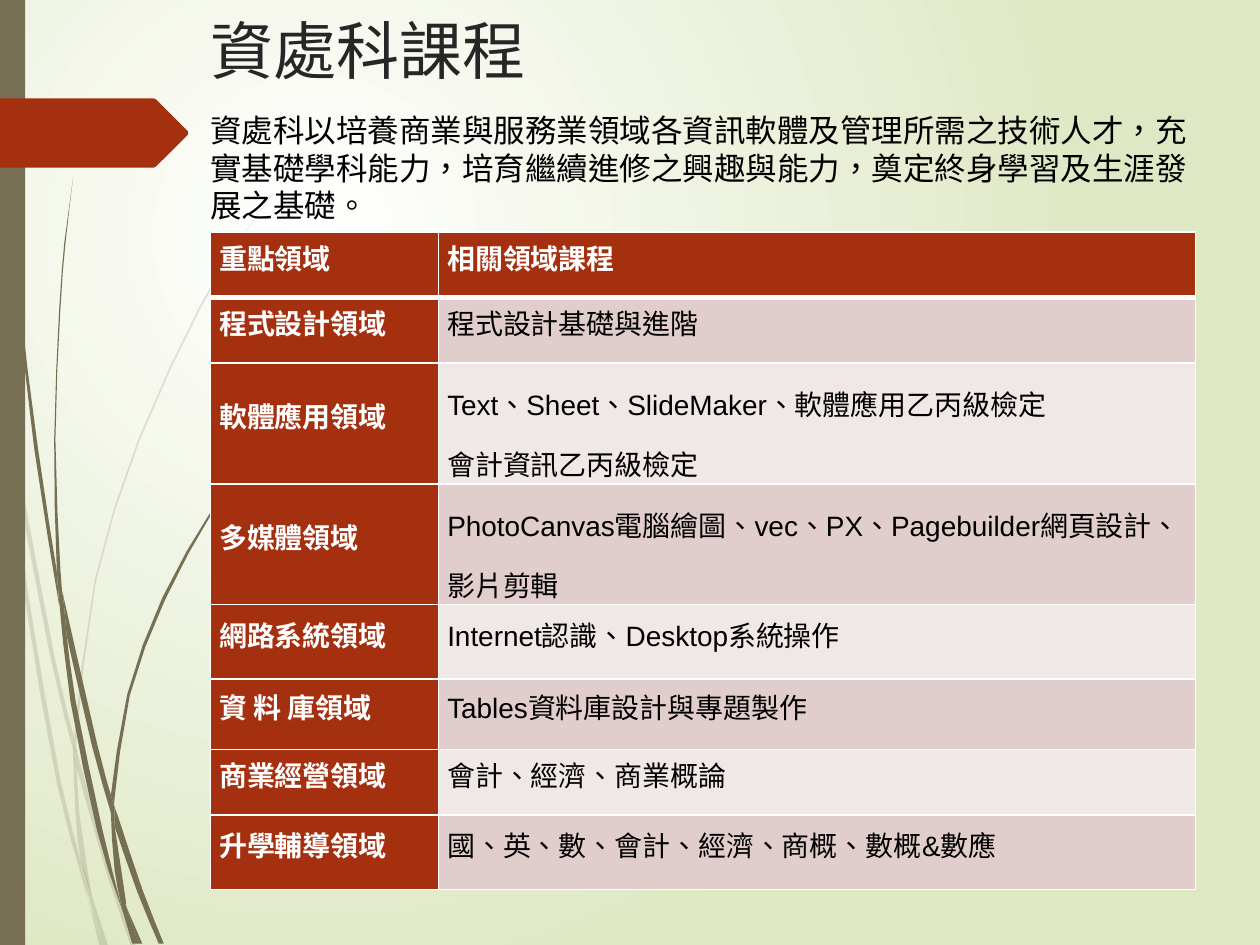
from lxml import etree
from pptx import Presentation
from pptx import util as u
from pptx.dml.color import RGBColor
from pptx.enum import lang, shapes, text
from pptx.oxml.ns import qn

COLORS = {"olive": "766F54", "red": "A53010", "white": "FFFFFF", "green": "DFE8C4",
          "title": "262626", "black": "000000", "pink": "E1CDCC", "pale": "F0E8E7"}

TITLE = "資處科課程"
INTRO = ("資處科以培養商業與服務業領域各資訊軟體及管理所需之技術人才，充實基礎學科能力，"
         "培育繼續進修之興趣與能力，奠定終身學習及生涯發展之基礎。")

# Row height, field, course paragraphs, line spacing of the courses
FIXED = u.Pt(14.4)
ROWS = [
    (0.52, "重點領域", ["相關領域課程"], FIXED),
    (0.52, "程式設計領域", ["程式設計基礎與進階"], FIXED),
    (0.96, "軟體應用領域", ["Text、Sheet、SlideMaker、軟體應用乙丙級檢定", "會計資訊乙丙級檢定"], 1.5),
    (0.96, "多媒體領域", ["PhotoCanvas電腦繪圖、vec、PX、Pagebuilder網頁設計、影片剪輯"], 1.5),
    (0.59, "網路系統領域", ["Internet認識、Desktop系統操作"], FIXED),
    (0.56, "資 料 庫領域", ["Tables資料庫設計與專題製作"], FIXED),
    (0.52, "商業經營領域", ["會計、經濟、商業概論"], FIXED),
    (0.59, "升學輔導領域", ["國、英、數、會計、經濟、商概、數概&數應"], FIXED),
]
COLUMNS = [1.81, 6.01]

# Grass blades: one edge, then the other edge on the way back
FAINT_BLADES = [
    ([(0.08, 3.5), (0.06, 3.22), (0, 2.82)], [(0, 2.99), (0.07, 3.44)]),
    ([(0.59, 5.86), (0.43, 5.2), (0.1, 3.45)], [(0.12, 3.76), (0.4, 5.22), (0.59, 5.99)]),
    ([(0.61, 5.96), (0.64, 6.07), (0.88, 6.92), (1.08, 7.51)],
     [(1.04, 7.51), (0.85, 6.94), (0.61, 6.1)]),
    ([(0.83, 7.51), (0.86, 7.51)], [(0.73, 7.11)]),
    ([(0.08, 3.5), (0.12, 3.76), (0.22, 4.69), (0.48, 6.19), (0.64, 6.83), (0.7, 7.14)],
     [(0.64, 6.93), (0.45, 6.21), (0.19, 4.7), (0.08, 3.5)]),
    ([(0.58, 5.99), (0.6, 6.46), (0.64, 6.83), (0.73, 7.11)],
     [(0.72, 7.06), (0.63, 6.46), (0.61, 6.1), (0.58, 5.99)]),
    ([(0.61, 5.96), (0.61, 5.84), (0.76, 4.62), (1.11, 3.49), (1.59, 2.45), (1.87, 1.98),
      (2.01, 1.75), (2.17, 1.54)],
     [(2.17, 1.53), (2.01, 1.75), (1.86, 1.97), (1.58, 2.44), (1.1, 3.48), (0.75, 4.61),
      (0.59, 5.84)]),
    ([(0.7, 7.14), (0.79, 7.51)], [(0.82, 7.51)]),
    ([(0.61, 6.1), (0.61, 5.96), (0.59, 5.86)], [(0.58, 5.99)]),
    ([(0.65, 6.83), (0.69, 7.07), (0.82, 7.51)], [(0.83, 7.51), (0.73, 7.11), (0.65, 6.83)]),
]
SOLID_BLADES = [
    ([(0.02, 0), (0.03, 0.48), (0.05, 1.1), (0.14, 2.33), (0.27, 3.55), (0.47, 4.81)],
     [(0.45, 4.53), (0.3, 3.55), (0.15, 2.32), (0.06, 1.09), (0.04, 0.48), (0.03, 0)]),
    ([(0.88, 6.31), (0.77, 5.9), (0.5, 4.72)], [(0.53, 5.05), (0.73, 5.92), (0.88, 6.45)]),
    ([(0.91, 6.41), (0.94, 6.49), (1.13, 7.06), (1.3, 7.49)],
     [(1.26, 7.49), (1.09, 7.08), (0.91, 6.56)]),
    ([(0.47, 4.77), (0.53, 5.05), (0.6, 5.56), (0.81, 6.57), (0.97, 7.22)],
     [(0.92, 7.08), (0.77, 6.59), (0.56, 5.57), (0.47, 4.77)]),
    ([(0.5, 4.72), (0.48, 4.53), (0.44, 3.49), (0.48, 2.45), (0.52, 1.93), (0.58, 1.41)],
     [(0.51, 1.93), (0.47, 2.45), (0.43, 3.49), (0.45, 4.49), (0.49, 4.72)]),
    ([(1, 7.19), (1.1, 7.49)], [(1.13, 7.49)]),
    ([(0.45, 4.49), (0.47, 4.77), (0.53, 5.05)], [(0.5, 4.72), (0.49, 4.72)]),
    ([(0.91, 6.41), (0.91, 6.33), (1.03, 5.52), (1.31, 4.76), (1.69, 4.06), (2.03, 3.59),
      (2.16, 3.44)],
     [(2.15, 3.44), (2.03, 3.58), (1.68, 4.05), (1.29, 4.74), (1.01, 5.51), (0.88, 6.31)]),
    ([(0.97, 7.22), (1.05, 7.49)], [(1.08, 7.49)]),
    ([(0.88, 6.45), (0.91, 6.91), (1, 7.19)], [(1, 7.16), (0.91, 6.56), (0.88, 6.45)]),
    ([(0.88, 6.45), (0.91, 6.56)], [(0.91, 6.41), (0.88, 6.31)]),
    ([(0.91, 6.91), (0.97, 7.22), (1.08, 7.49)], [(1.1, 7.49), (1, 7.19), (0.91, 6.91)]),
]
TAG = [(0, 0.78), (1.22, 0.78), (1.24, 0.79), (1.49, 1.04), (1.49, 1.07), (1.24, 1.32),
       (1.22, 1.33), (0, 1.33)]


def color(name):
    return RGBColor.from_string(COLORS[name])


def smooth(points, steps=2):
    """Points along a Catmull-Rom curve through the given ones."""
    padded = [points[0], *points, points[-1]]
    curve = [points[0]]
    for a, b, c, d in zip(padded, padded[1:], padded[2:], padded[3:]):
        for step in range(1, steps + 1):
            t = step / steps
            curve.append(tuple(
                q + (r - p) * t / 2 + (2 * p - 5 * q + 4 * r - s) * t**2 / 2
                + (3 * q - p - 3 * r + s) * t**3 / 2 for p, q, r, s in zip(a, b, c, d)))
    return curve


def paint(shape, fill, opacity=100):
    shape.shadow.inherit = False
    shape.fill.solid()
    shape.fill.fore_color.rgb = color(fill)
    shape.line.fill.background()
    if opacity < 100:
        tint = shape.fill._xPr.find(".//" + qn("a:srgbClr"))
        etree.SubElement(tint, qn("a:alpha"), val=str(opacity * 1000))


def add_outline(slide, points, fill, opacity=100):
    start, *rest = [(u.Inches(x), u.Inches(y)) for x, y in points]
    builder = slide.shapes.build_freeform(*start)
    builder.add_line_segments(rest, close=True)
    paint(builder.convert_to_shape(), fill, opacity)


def add_run(paragraph, content, size, font, ink, bold=False):
    run = paragraph.add_run()
    run.text = content
    run.font.size, run.font.name, run.font.bold = u.Pt(size), font, bold
    run.font.color.rgb = color(ink)
    run.font.language_id = lang.MSO_LANGUAGE_ID.TRADITIONAL_CHINESE


def add_text(slide, box, content, size, font, ink):
    frame = slide.shapes.add_textbox(*map(u.Inches, box)).text_frame
    frame.word_wrap = True
    add_run(frame.paragraphs[0], content, size, font, ink)


def set_borders(cell, bottom):
    properties = cell._tc.get_or_add_tcPr()
    for index, (side, width) in enumerate([("L", 1), ("R", 1), ("T", 1), ("B", bottom)]):
        line = etree.Element(qn("a:ln" + side), w=str(u.Pt(width)))
        fill = etree.SubElement(line, qn("a:solidFill"))
        etree.SubElement(fill, qn("a:srgbClr"), val=COLORS["white"])
        properties.insert(index, line)


def fill_cell(cell, lines, spacing, fill, strong, bottom):
    cell.fill.solid()
    cell.fill.fore_color.rgb = color(fill)
    cell.vertical_anchor = text.MSO_ANCHOR.MIDDLE
    cell.margin_left = cell.margin_right = u.Inches(0.07)
    cell.margin_top = cell.margin_bottom = 0
    for index, line in enumerate(lines):
        frame = cell.text_frame
        paragraph = frame.add_paragraph() if index else frame.paragraphs[0]
        paragraph.line_spacing = spacing
        add_run(paragraph, line, 16, "Calibri" if index else "Arial",
                "white" if strong else "black", strong)
    set_borders(cell, bottom)


def main():
    presentation = Presentation()
    presentation.slide_width, presentation.slide_height = u.Inches(10), u.Inches(7.5)
    slide = presentation.slides.add_slide(presentation.slide_layouts[6])

    # Background: radial gradient centred in the upper left
    fill = slide.background.fill
    fill.gradient()
    for stop, name, position in zip(fill.gradient_stops, ("white", "green"), (0, 1)):
        stop.color.rgb, stop.position = color(name), position
    linear = slide.background._cSld.find(".//" + qn("a:lin"))
    radial = etree.Element(qn("a:path"), {"path": "circle"})
    etree.SubElement(radial, qn("a:fillToRect"), l="50000", t="50000", r="100000", b="100000")
    linear.getparent().replace(linear, radial)

    # Grass, side bar and tag
    for blades, opacity in ((FAINT_BLADES, 20), (SOLID_BLADES, 100)):
        for edge, back in blades:
            add_outline(slide, smooth(edge) + smooth(back), "olive", opacity)
    bar = slide.shapes.add_shape(shapes.MSO_SHAPE.RECTANGLE, 0, 0, u.Inches(0.2), u.Inches(7.5))
    paint(bar, "olive")
    add_outline(slide, TAG, "red")

    # Title
    add_text(slide, (1.57, 0.04, 8.2, 0.97), TITLE, 36, "Quicksand", "title")

    # Course table
    table = slide.shapes.add_table(len(ROWS), len(COLUMNS), *map(
        u.Inches, (1.67, 1.84, sum(COLUMNS), sum(row[0] for row in ROWS)))).table
    for column, width in zip(table.columns, COLUMNS):
        column.width = u.Inches(width)
    for index, (height, field, courses, spacing) in enumerate(ROWS):
        table.rows[index].height = u.Inches(height)
        header = index == 0
        band = "red" if header else ("pale", "pink")[index % 2]
        bottom = 3 if header else 1
        fill_cell(table.cell(index, 0), [field], FIXED, "red", True, bottom)
        fill_cell(table.cell(index, 1), courses, spacing, band, header, bottom)

    # Introduction
    add_text(slide, (1.57, 0.83, 8.01, 1.01), INTRO, 18, "Arial", "black")

    presentation.save("out.pptx")


if __name__ == "__main__":
    main()
